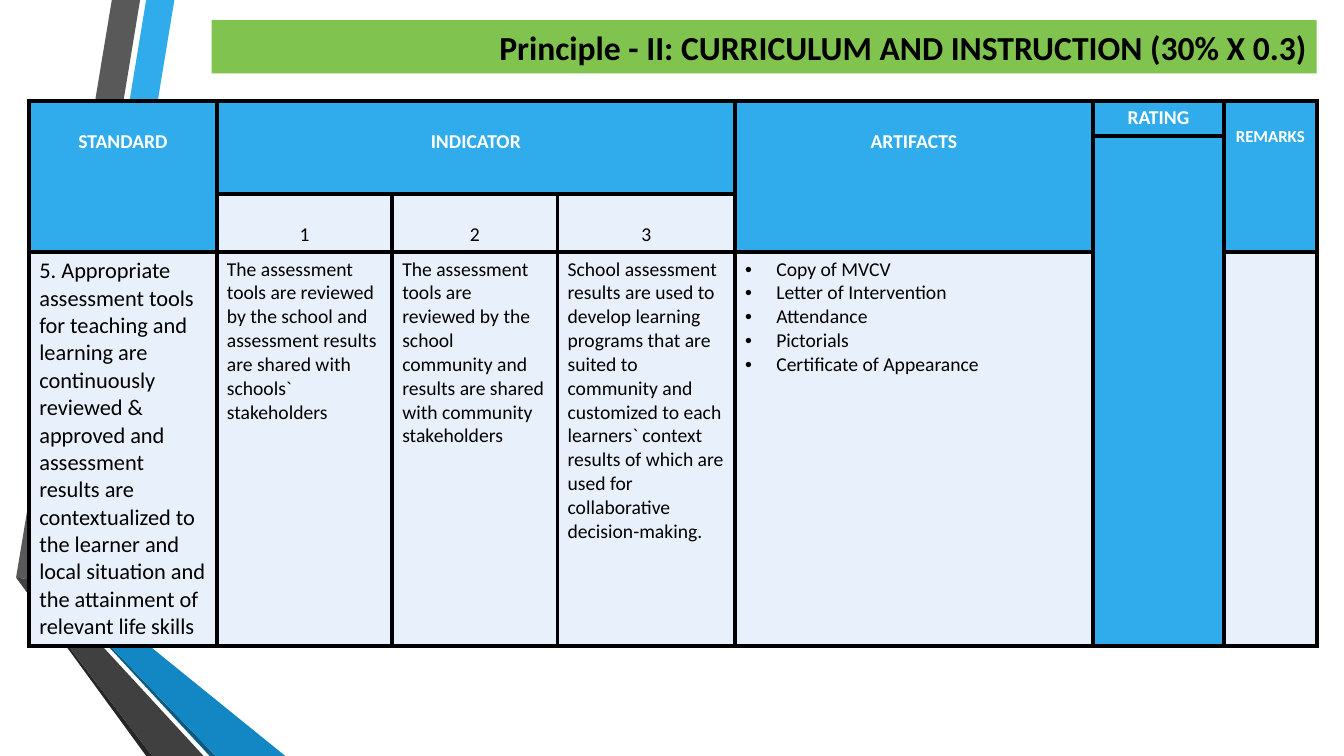
from lxml.etree import SubElement, fromstring
from pptx import Presentation
from pptx.dml.color import RGBColor
from pptx.enum.shapes import MSO_SHAPE
from pptx.enum.text import MSO_ANCHOR, PP_ALIGN
from pptx.oxml.ns import nsdecls, qn
from pptx.util import Cm, Pt

FONT = "Calibri"
BLUE, PALE, GREEN = "30ACEC", "E8F1FB", "80C34F"
BLACK, WHITE = "000000", "FFFFFF"

RIBBONS = [
    (BLUE, [(0.5, 5.78), (0.77, 5.83), (1.73, 0), (1.45, 0)]),
    ("595959", [(1.39, 0), (1.11, 0), (0.16, 5.73), (0.44, 5.77)]),
    ("262626", [(0.16, 5.73), (1.45, 7.5), (1.51, 7.5)]),
    ("0C5A82", [(0.5, 5.79), (2.08, 7.5), (2.14, 7.5)]),
    ("1287C3", [(0.5, 5.79), (2.14, 7.5), (2.83, 7.5), (0.77, 5.83), (0.5, 5.78)]),
    ("404040", [(2.02, 7.5), (0.48, 5.83), (0.43, 5.78), (0.44, 5.77),
                (0.16, 5.73), (1.51, 7.5)]),
]

TITLE = "Principle - II: CURRICULUM AND INSTRUCTION (30% X 0.3)"
COLUMNS = [1.86, 1.74, 1.64, 1.76, 3.55, 1.3, 0.92]
ROWS = [0.35, 0.57, 0.58, 3.9]
MERGES = [((0, 0), (2, 0)), ((0, 1), (1, 3)), ((0, 4), (2, 4)),
          ((1, 5), (3, 5)), ((0, 6), (2, 6))]

HEADINGS = [
    (0, 0, "STANDARD", 14, 2),
    (0, 1, "INDICATOR", 14, 2),
    (0, 4, "ARTIFACTS", 14, 2),
    (0, 5, "RATING", 14, 1),
    (0, 6, "REMARKS", 12, 2),
]
LEVELS = ["1", "2", "3"]
STANDARD = (
    "5. Appropriate assessment tools for teaching and learning are continuously "
    "reviewed & approved and assessment results are contextualized to the learner "
    "and local situation and the attainment of relevant life skills"
)
INDICATORS = [
    "The assessment tools are reviewed by the school and assessment results are "
    "shared with schools` stakeholders",
    "The assessment tools are reviewed by the school community and results are "
    "shared with community stakeholders",
    "School assessment results are used to develop learning programs that are "
    "suited to community and customized to each learners` context results of which "
    "are used for collaborative decision-making.",
]
ARTIFACTS = ["Copy of MVCV", "Letter of Intervention", "Attendance", "Pictorials",
             "Certificate of Appearance"]


def inch(value):
    return Cm(value * 2.54)


def paint(fill, colour):
    fill.solid()
    fill.fore_color.rgb = RGBColor.from_string(colour)


def write(para, text, size, colour=BLACK, bold=False, align=PP_ALIGN.LEFT, spacing=1):
    para.alignment = align
    para.line_spacing = spacing
    span = para.add_run()
    span.text = text
    span.font.name = FONT
    span.font.size = Pt(size)
    span.font.bold = bold
    paint(span.font.fill, colour)


def add_bullet(para):
    props = para._p.get_or_add_pPr()
    props.set("marL", str(inch(0.31)))
    props.set("indent", str(-inch(0.31)))
    SubElement(props, qn("a:buFont")).set("typeface", "Arial")
    SubElement(props, qn("a:buChar")).set("char", "•")


def add_borders(cell):
    props = cell._tc.get_or_add_tcPr()
    for index, side in enumerate("LRTB"):
        props.insert(index, fromstring(
            f'<a:ln{side} {nsdecls("a")} w="{Pt(3)}"><a:solidFill>'
            f'<a:srgbClr val="{BLACK}"/></a:solidFill></a:ln{side}>'))


def draw_ribbons(page):
    for colour, outline in RIBBONS:
        points = [(inch(x), inch(y)) for x, y in outline]
        builder = page.shapes.build_freeform(*points[0], scale=1.0)
        builder.add_line_segments(points[1:], close=True)
        ribbon = builder.convert_to_shape()
        ribbon.shadow.inherit = False
        paint(ribbon.fill, colour)
        ribbon.line.fill.background()


def draw_title(page):
    box = page.shapes.add_shape(
        MSO_SHAPE.RECTANGLE, inch(2.1), inch(0.2), inch(10.96), inch(0.53))
    box.shadow.inherit = False
    paint(box.fill, GREEN)
    box.line.fill.background()
    frame = box.text_frame
    frame.word_wrap = True
    frame.vertical_anchor = MSO_ANCHOR.MIDDLE
    write(frame.paragraphs[0], TITLE, 24, bold=True, align=PP_ALIGN.RIGHT)


def draw_table(page):
    table = page.shapes.add_table(
        len(ROWS), len(COLUMNS), inch(0.29), inch(1),
        inch(sum(COLUMNS)), inch(sum(ROWS))).table
    table.first_row = table.horz_banding = False
    for column, width in zip(table.columns, COLUMNS):
        column.width = inch(width)
    for row, height in zip(table.rows, ROWS):
        row.height = inch(height)
    for r in range(len(ROWS)):
        for c in range(len(COLUMNS)):
            cell = table.cell(r, c)
            add_borders(cell)
            pale = r == 3 or (r == 2 and 1 <= c <= 3)
            paint(cell.fill, PALE if pale and c != 5 else BLUE)
    for first, last in MERGES:
        table.cell(*first).merge(table.cell(*last))

    def first_para(r, c):
        return table.cell(r, c).text_frame.paragraphs[0]

    for r, c, text, size, spacing in HEADINGS:
        write(first_para(r, c), text, size, WHITE, True, PP_ALIGN.CENTER, spacing)
    write(first_para(3, 0), STANDARD, 16)
    for c, (level, indicator) in enumerate(zip(LEVELS, INDICATORS), 1):
        write(first_para(2, c), level, 14, align=PP_ALIGN.CENTER, spacing=2)
        write(first_para(3, c), indicator, 14)
    frame = table.cell(3, 4).text_frame
    for index, artifact in enumerate(ARTIFACTS):
        para = frame.add_paragraph() if index else frame.paragraphs[0]
        write(para, artifact, 14)
        add_bullet(para)


def main():
    deck = Presentation()
    deck.slide_width, deck.slide_height = inch(13.33), inch(7.5)
    page = deck.slides.add_slide(deck.slide_layouts[6])
    paint(page.background.fill, WHITE)
    draw_ribbons(page)
    draw_title(page)
    draw_table(page)
    deck.save("out.pptx")


if __name__ == "__main__":
    main()
